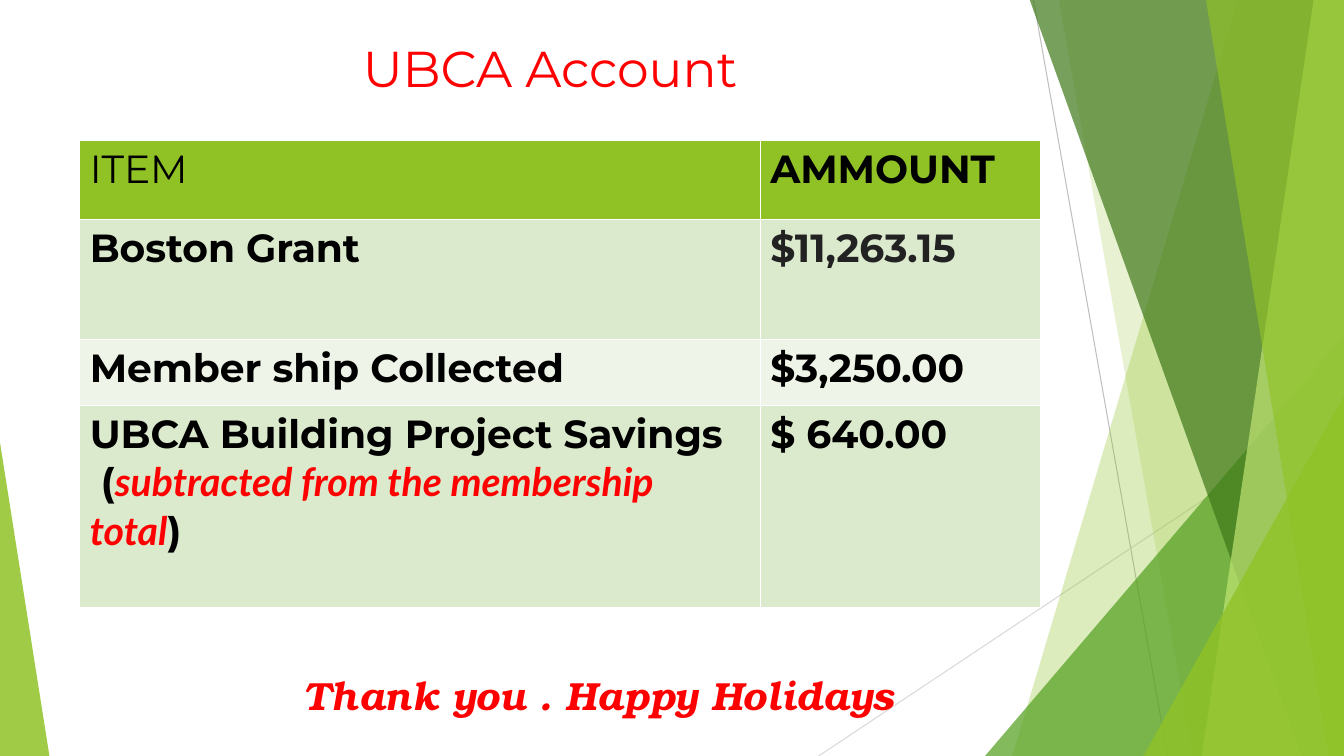
from lxml import etree
from pptx import Presentation
from pptx.dml.color import RGBColor
from pptx.enum.shapes import MSO_CONNECTOR, MSO_SHAPE
from pptx.oxml.ns import qn
from pptx.util import Inches, Pt

LINE = MSO_CONNECTOR.STRAIGHT
WEDGE = MSO_SHAPE.ISOSCELES_TRIANGLE

LIME = RGBColor(0x90, 0xC2, 0x26)
GREEN = RGBColor(0x54, 0xA0, 0x21)
DARK = RGBColor(0x3F, 0x78, 0x19)
PALE = RGBColor(0xC0, 0xE4, 0x74)
BAND = RGBColor(0xDB, 0xE9, 0xCD)
LIGHT = RGBColor(0xEE, 0xF4, 0xE8)
GRAY = RGBColor(0xBF, 0xBF, 0xBF)
SILVER = RGBColor(0xD9, 0xD9, 0xD9)
RED = RGBColor(0xFF, 0, 0)
BLACK = RGBColor(0, 0, 0)
COAL = RGBColor(0x22, 0x22, 0x22)

WIDE, HIGH = 13.33, 7.5
TOP = -0.01


class Deck:
    sans = "Montserrat"
    note = "Lato"
    serif = "TeX Gyre Bonum"

    def __init__(self):
        self.file = Presentation()
        self.file.slide_width = Inches(WIDE)
        self.file.slide_height = Inches(HIGH)
        self.slide = self.file.slides.add_slide(self.file.slide_layouts[6])
        self.shapes = self.slide.shapes

    def paint(self, shape, color, alpha):
        shape.shadow.inherit = False
        shape.line.fill.background()
        shape.fill.solid()
        shape.fill.fore_color.rgb = color
        tone = shape.fill._xPr.find(".//" + qn("a:srgbClr"))
        etree.SubElement(tone, qn("a:alpha")).set("val", str(alpha * 1000))

    def line(self, x1, y1, x2, y2, color):
        line = self.shapes.add_connector(
            LINE, Inches(x1), Inches(y1), Inches(x2), Inches(y2))
        line.line.color.rgb = color
        line.line.width = Pt(0.75)
        etree.SubElement(line._element.spPr, qn("a:effectLst"))

    def blade(self, top, base, color, alpha):
        """Fill from a slanted left edge to the right side of the slide."""
        form = self.shapes.build_freeform(Inches(top), Inches(TOP), scale=1.0)
        ends = [(WIDE, TOP), (WIDE, HIGH), (base, HIGH)]
        form.add_line_segments([(Inches(x), Inches(y)) for x, y in ends])
        self.paint(form.convert_to_shape(), color, alpha)

    def wedge(self, x, y, wide, tip, color, alpha):
        """Stand a triangle on the bottom edge, with its tip at one side."""
        shape = self.shapes.add_shape(
            WEDGE, Inches(x), Inches(y), Inches(wide), Inches(HIGH - y))
        shape.adjustments[0] = tip
        self.paint(shape, color, alpha)

    def font(self, font, name, size, color, bold=False, italic=False):
        font.name, font.size = name, Pt(size)
        font.bold, font.italic = bold, italic
        font.color.rgb = color

    def text(self, x, y, wide, high, words, *style):
        box = self.shapes.add_textbox(
            Inches(x), Inches(y), Inches(wide), Inches(high))
        box.text_frame.word_wrap = True
        para = box.text_frame.paragraphs[0]
        para.text = words
        self.font(para.font, *style)

    def table(self, x, y, cols, rows, data, fills):
        frame = self.shapes.add_table(
            len(rows), len(cols), Inches(x), Inches(y),
            Inches(sum(cols)), Inches(sum(rows)))
        table = frame.table
        table.horz_banding = False
        for col, wide in zip(table.columns, cols):
            col.width = Inches(wide)
        for row, high, items, fill in zip(table.rows, rows, data, fills):
            row.height = Inches(high)
            for cell, (words, color, bold) in zip(row.cells, items):
                cell.fill.solid()
                cell.fill.fore_color.rgb = fill
                para = cell.text_frame.paragraphs[0]
                para.text = words
                self.font(para.font, self.sans, 28, color, bold)
                # Cell runs need their own style to override the table style
                self.font(para.runs[0].font, self.sans, 28, color, bold)
        return table

    def remark(self, cell, parts):
        para = cell.text_frame.add_paragraph()
        para._p.get_or_add_pPr().set("indent", str(Inches(0.11)))
        for words, *style in parts:
            run = para.add_run()
            run.text = words
            self.font(run.font, *style)


def main():
    deck = Deck()

    # Green facets
    deck.line(10.25, 0, 11.58, HIGH, GRAY)
    deck.line(WIDE, 4.03, 8.12, HIGH, SILVER)
    deck.blade(12.28, 10.04, LIME, 30)
    deck.blade(10.5, 11.83, LIME, 20)
    deck.wedge(9.77, 3.33, 3.56, 1, GREEN, 72)
    deck.blade(10.21, 12.91, DARK, 70)
    deck.blade(13.03, 11.92, PALE, 70)
    deck.blade(11.96, 13.18, LIME, 65)
    deck.wedge(11.34, 3.93, 1.99, 1, LIME, 80)
    deck.wedge(0, 4.39, 0.49, 0, LIME, 85)

    # Title
    deck.text(3.5, 0.32, 4.87, 0.75, "UBCA Account", deck.sans, 36, RED)

    # Account table
    data = [
        [("ITEM", BLACK, False), ("AMMOUNT", BLACK, True)],
        [("Boston Grant", BLACK, True), ("$11,263.15", COAL, True)],
        [("Member ship Collected", BLACK, True), ("$3,250.00", BLACK, True)],
        [("UBCA Building Project Savings", BLACK, True),
         ("$ 640.00", BLACK, True)],
    ]
    table = deck.table(0.79, 1.39, [6.75, 2.78], [0.79, 1.19, 0.65, 2.01],
                       data, [LIME, BAND, LIGHT, BAND])
    deck.remark(table.cell(3, 0), [
        ("(", deck.sans, 28, BLACK, True),
        ("subtracted from the membership total",
         deck.note, 28, RED, True, True),
        (")", deck.sans, 28, BLACK, True),
    ])

    # Closing words
    deck.text(2.91, 6.61, 6.24, 0.57, "Thank you . Happy Holidays",
              deck.serif, 28, RED, True, True)

    deck.file.save("out.pptx")


if __name__ == "__main__":
    main()
